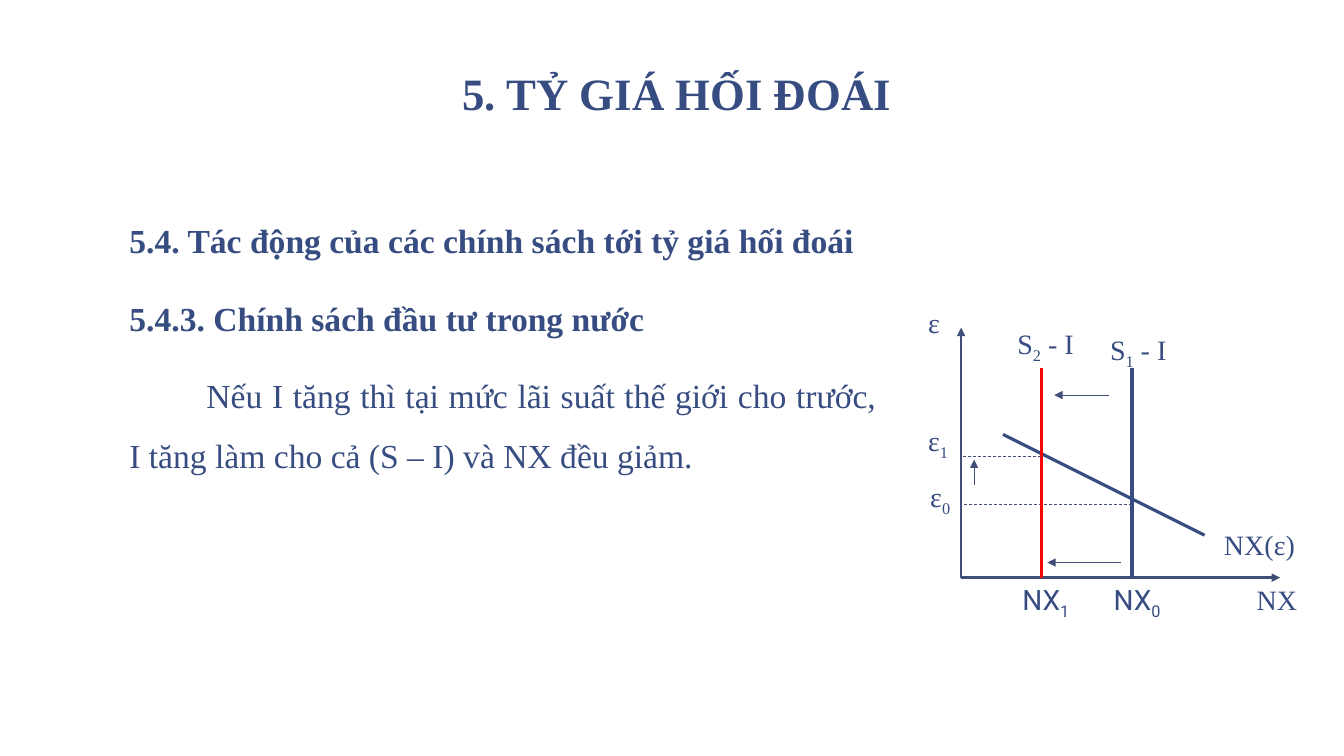
from lxml.etree import SubElement
from pptx import Presentation
from pptx.dml.color import RGBColor
from pptx.enum.dml import MSO_LINE
from pptx.enum.shapes import MSO_CONNECTOR
from pptx.enum.text import MSO_ANCHOR, MSO_AUTO_SIZE, PP_ALIGN
from pptx.oxml.ns import qn
from pptx.util import Pt

COLORS = {"text": "374C81", "axis": "414E77", "shift": "FF0000"}
SERIF = "Times New Roman"
SANS = "Roboto"


class SlideBuilder:
    """Holds the style and the current slide."""

    def __init__(self, page):
        """Keep the slide that receives the elements."""
        self.page = page

    def style(self, font, size, name=SERIF, bold=False):
        """Apply typeface, size, weight and text colour."""
        font.name, font.size, font.bold = name, Pt(size), bold
        font.color.rgb = RGBColor.from_string(COLORS["text"])

    def place(self, box, left, top, width, height):
        """Move a placeholder and set its insets."""
        box.left, box.top, box.width, box.height = Pt(left), Pt(top), Pt(width), Pt(height)
        frame = box.text_frame
        frame.word_wrap = True
        frame.auto_size = MSO_AUTO_SIZE.NONE
        frame.margin_left = frame.margin_right = Pt(9.6)
        frame.margin_top = frame.margin_bottom = Pt(4.8)
        return frame

    def title(self, text, *bounds):
        """Fill the title placeholder."""
        frame = self.place(self.page.shapes.title, *bounds)
        frame.vertical_anchor = MSO_ANCHOR.BOTTOM
        frame.text = text
        para = frame.paragraphs[0]
        para.alignment = PP_ALIGN.CENTER
        para.line_spacing = 1.5
        self.style(para.runs[0].font, 32, bold=True)

    def body(self, items, *bounds):
        """Fill the body placeholder with (text, bold, alignment, indent) items."""
        frame = self.place(self.page.placeholders[1], *bounds)
        frame.vertical_anchor = MSO_ANCHOR.TOP
        frame.text = "\n".join(item[0] for item in items)
        for index, (para, item) in enumerate(zip(frame.paragraphs, items)):
            _, bold, alignment, indent = item
            properties = para._p.get_or_add_pPr()
            properties.set("marL", "0")
            properties.set("indent", str(Pt(indent)))
            SubElement(properties, qn("a:buNone"))
            para.alignment = alignment
            para.line_spacing = 1.5
            para.space_before = Pt(12 if index else 0)
            self.style(para.runs[0].font, 24, bold=bold)

    def label(self, parts, left, top, width, height, name=SERIF, spacing=None):
        """Add a chart label whose second part is a subscript."""
        box = self.page.shapes.add_textbox(Pt(left), Pt(top), Pt(width), Pt(height))
        frame = box.text_frame
        frame.word_wrap = True
        frame.auto_size = MSO_AUTO_SIZE.SHAPE_TO_FIT_TEXT
        para = frame.paragraphs[0]
        if spacing:
            para.alignment = PP_ALIGN.JUSTIFY
            para.line_spacing = Pt(spacing)
        for index, part in enumerate(parts):
            span = para.add_run()
            span.text = part
            self.style(span.font, 20, name)
            if index == 1:
                span._r.get_or_add_rPr().set("baseline", "-25000")

    def line(self, start, end, color, width, dashed=False, arrow=False):
        """Add a straight line, dashed or with an arrowhead at its end."""
        points = [Pt(value) for value in (*start, *end)]
        link = self.page.shapes.add_connector(MSO_CONNECTOR.STRAIGHT, *points)
        link.line.color.rgb = RGBColor.from_string(COLORS[color])
        link.line.width = Pt(width)
        if dashed:
            link.line.dash_style = MSO_LINE.DASH
        properties = link._element.spPr
        if arrow:
            SubElement(properties.find(qn("a:ln")), qn("a:tailEnd"), type="triangle")
        SubElement(properties, qn("a:effectLst"))


def main():
    """Build the slide and save the deck."""
    deck = Presentation()
    deck.slide_width, deck.slide_height = Pt(960), Pt(540)
    slide = SlideBuilder(deck.slides.add_slide(deck.slide_layouts[1]))

    slide.title("5. TỶ GIÁ HỐI ĐOÁI", 83.5, 0, 800, 90)
    slide.body([
        ("5.4. Tác động của các chính sách tới tỷ giá hối đoái", True, PP_ALIGN.LEFT, 0),
        ("5.4.3. Chính sách đầu tư trong nước", True, PP_ALIGN.LEFT, 0),
        ("Nếu I tăng thì tại mức lãi suất thế giới cho trước, "
         "I tăng làm cho cả (S – I) và NX đều giảm.", False, PP_ALIGN.JUSTIFY, 55),
    ], 82.8, 138.2, 553, 294.5)

    origin_x, origin_y = 686.5, 412.6
    supply_before, supply_after = 808.6, 743.8
    slide.line((716.4, 310.3), (860.4, 382.3), "text", 2.25)
    slide.line((origin_x, origin_y), (origin_x, 234), "axis", 2, arrow=True)
    slide.line((origin_x, origin_y), (914.4, origin_y), "axis", 2, arrow=True)
    for x, rate, color in ((supply_before, 360, "text"), (supply_after, 326.2, "shift")):
        slide.line((x, origin_y), (x, 262.8), color, 2.25)
        slide.line((x, rate), (origin_x, rate), "axis", 0.5, dashed=True)
    for start, end in (
        ((800.6, 401.8), (748.1, 401.8)),
        ((695.8, 346.3), (695.8, 328.3)),
        ((792, 282.2), (753.1, 282.2)),
    ):
        slide.line(start, end, "axis", 0.5, arrow=True)

    for parts, left, top, width in (
        (("S", "1", " - I"), 785.8, 228.2, 70),
        (("S", "2", " - I"), 719.6, 223.9, 70),
        (("ε",), 655.9, 205.5, 36),
        (("ε", "1"), 655.9, 293.5, 36),
        (("ε", "0"), 657.4, 333.4, 36),
        (("NX(ε)",), 867.2, 364.3, 70),
    ):
        slide.label(parts, left, top, width, 40.2, spacing=33)
    for parts, left, width, name in (
        (("NX", "0"), 788.4, 60.5, SANS),
        (("NX", "1"), 723.2, 60.5, SANS),
        (("NX",), 890.6, 48.2, SERIF),
    ):
        slide.label(parts, left, origin_y, width, 31.5, name)

    deck.save("out.pptx")


if __name__ == "__main__":
    main()
